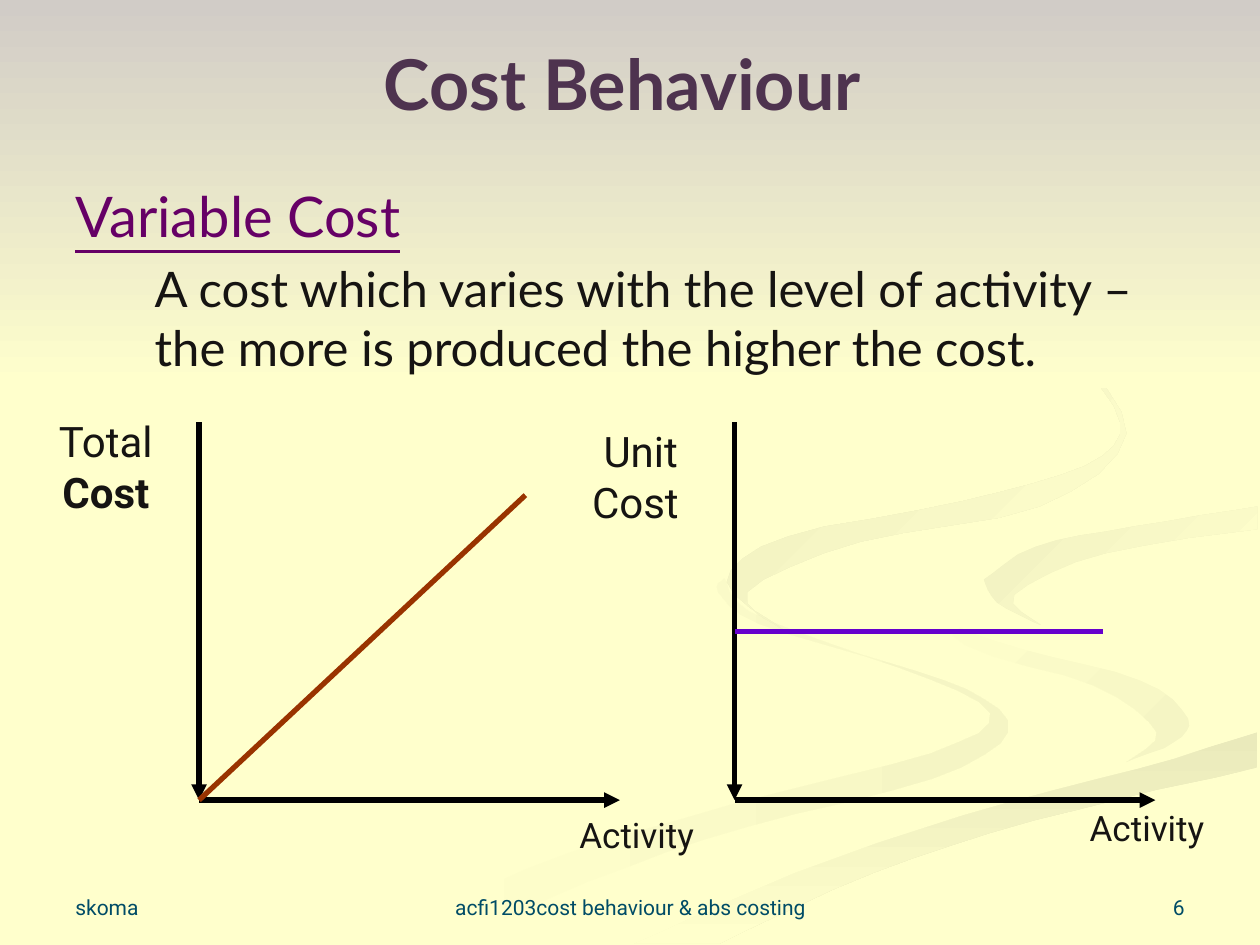
from pptx import Presentation
from pptx.dml.color import RGBColor
from pptx.enum.shapes import MSO_CONNECTOR
from pptx.enum.text import MSO_ANCHOR as ANCHOR, PP_ALIGN as ALIGN
from pptx.oxml.ns import qn
from pptx.util import Inches, Pt
from lxml import etree


def color(value):
    return RGBColor.from_string(value)


def add_text(at, paragraphs, anchor=ANCHOR.TOP):
    """Each paragraph is (format values, runs); each run is (text, font values, colour)."""
    box = slide.shapes.add_textbox(*map(Inches, at))
    frame = box.text_frame
    frame.word_wrap = True
    frame.vertical_anchor = anchor
    for number, (formats, runs) in enumerate(paragraphs):
        para = frame.add_paragraph() if number else frame.paragraphs[0]
        for name, value in formats.items():
            setattr(para, name, value)
        for words, font, hue in runs:
            span = para.add_run()
            span.text = words
            span.font.color.rgb = color(hue)
            for name, value in font.items():
                setattr(span.font, name, value)
    return box


deck = Presentation()
deck.slide_width, deck.slide_height = Inches(10), Inches(7.5)
slide = deck.slides.add_slide(deck.slide_layouts[6])

PAPER, INK = "FFFFCC", "161412"
background = slide.background.fill
background.solid()
background.fore_color.rgb = color(PAPER)

# Ribbon edges, in hundredths of an inch; neighbouring ribbons share edges
left_outer = [(575, 459), (594, 485), (682, 519), (767, 547), (800, 581),
              (740, 618), (594, 656), (466, 700), (361, 749)]
left_inner = [(300, 749), (417, 690), (579, 639), (739, 598), (786, 566),
              (714, 530), (602, 495), (570, 470), (575, 459)]
right_outer = [(724, 464), (745, 490), (811, 515), (905, 540), (943, 570),
               (932, 589), (894, 605)]
right_inner = [(894, 605), (918, 581), (868, 544), (766, 512), (724, 464)]
right_tail = [(894, 605), (780, 634), (619, 684), (477, 749)]
band_top = [(503, 749), (630, 693), (764, 647), (903, 610), (998, 581)]
band_bottom = [(998, 609), (821, 651), (695, 692), (571, 749)]
curl_back = [(998, 538), (866, 509), (804, 485), (781, 460)]
curl_top = [(781, 460), (822, 434), (899, 418), (998, 402)]
curl_bottom = [(998, 420), (878, 439), (805, 472), (826, 496)]
curl_end = [(826, 496), (791, 478), (781, 460)]
right_top = [(998, 387), (874, 408), (755, 432), (724, 464)]
upper_outer = [(622, 500), (577, 462), (625, 426), (763, 398), (861, 370),
               (889, 335), (846, 279), (762, 233)]
upper_inner = [(762, 233), (843, 275), (894, 344), (825, 402), (683, 430),
               (593, 470), (622, 500)]
page_top, page_fade = [(0, 0), (1000, 0)], [(1000, 308), (0, 308)]

# Ribbons and top fade: first colour, last colour, clockwise angle, edges
ribbons = [
    (PAPER, "F5F5C4", 0, [left_outer, left_inner]),
    (PAPER, "F5F5C4", 45, [right_outer, right_inner]),
    ("EAEABB", PAPER, 90, [band_top, band_bottom]),
    (PAPER, PAPER, 0,
     [right_outer, right_tail, band_top, curl_back, curl_top, right_top]),
    ("F1F1C1", PAPER, 45, [curl_top, curl_bottom, curl_end]),
    ("EDEDBE", PAPER, 45, [upper_outer, upper_inner]),
    ("D1CCC7", PAPER, 90, [page_top, page_fade]),
]
STEPS = 4
for first, last, angle, edges in ribbons:
    # Round each edge with a Catmull-Rom curve through its points
    outline = []
    for edge in edges:
        ends = [edge[0], *edge, edge[-1]]
        for a, b, c, d in zip(ends, ends[1:], ends[2:], ends[3:]):
            for t in (step / STEPS for step in range(STEPS)):
                outline.append(tuple(
                    q + t * (r - p + t * (2 * p - 5 * q + 4 * r - s
                                          + t * (3 * q - p - 3 * r + s))) / 2
                    for p, q, r, s in zip(a, b, c, d)))
        outline.append(edge[-1])
    builder = slide.shapes.build_freeform(*outline[0], scale=Inches(0.01))
    builder.add_line_segments(outline[1:], close=True)
    ribbon = builder.convert_to_shape()
    ribbon.shadow.inherit = False
    ribbon.line.fill.background()
    if first == last:
        ribbon.fill.solid()
        ribbon.fill.fore_color.rgb = color(first)
        continue
    ribbon.fill.gradient()
    ribbon.fill.gradient_angle = -angle % 360
    for stop, hue in zip(ribbon.fill.gradient_stops, (first, last)):
        stop.color.rgb = color(hue)

# Title and definition
title_font = {"name": "Lato", "size": Pt(40), "bold": True}
heading_font = {"name": "Lato", "size": Pt(32), "underline": True}
body_font = {"name": "Lato", "size": Pt(28)}
add_text((0.5, 0.3, 9, 0.71), [
    ({"alignment": ALIGN.CENTER}, [("Cost Behaviour ", title_font, "4E334F")]),
], ANCHOR.MIDDLE)
definition = add_text((0.5, 1.39, 9, 5.51), [
    ({}, [("Variable Cost", heading_font, "660066")]),
    ({"space_before": Pt(5.6)},
     [("A cost which varies with the level of activity – "
       "the more is produced the higher the cost.", body_font, INK)]),
])
definition.text_frame.paragraphs[1]._p.get_or_add_pPr().set("marL", str(Inches(0.63)))

# Axes and cost lines: start, end, colour, arrowhead
lines = []
for origin in (1.58, 5.83):
    lines += [((origin, 3.35), (origin, 6.35), "000000", True),
              ((origin, 6.35), (origin + 3.34, 6.35), "000000", True)]
lines += [((1.58, 6.35), (4.17, 3.93), "993300", False),
          ((5.83, 5.01), (8.75, 5.01), "6600CC", False)]
for start, end, hue, arrow in lines:
    line = slide.shapes.add_connector(
        MSO_CONNECTOR.STRAIGHT, *map(Inches, start + end))
    line.line.width = Pt(3)
    line.line.color.rgb = color(hue)
    if arrow:
        etree.SubElement(line.line._get_or_add_ln(), qn("a:tailEnd"), type="triangle")
    etree.SubElement(line._element.spPr, qn("a:effectLst"))

# Axis labels
small = {"name": "Roboto", "size": Pt(20)}
large = {"name": "Roboto", "size": Pt(24)}
for left, top in ((4.5, 6.41), (8.55, 6.35)):
    add_text((left, top, 1.33, 0.43), [({}, [("Activity", small, INK)])])
for at, runs in (
    ((0.34, 3.25, 1, 2.42),
     [("Total ", large, INK), ("Cost", {**large, "bold": True}, INK)]),
    ((4.42, 3.33, 1.33, 2.75), [("Unit Cost ", large, INK)]),
):
    add_text(at, [({"alignment": ALIGN.CENTER}, runs)])

# Footer
footer_font = {"name": "Roboto", "size": Pt(12)}
for left, width, align, words in (
    (0.5, 2.33, ALIGN.LEFT, "skoma"),
    (3.42, 3.17, ALIGN.CENTER, "acfi1203cost behaviour & abs costing"),
    (7.17, 2.33, ALIGN.RIGHT, "6"),
):
    add_text((left, 6.83, width, 0.52),
             [({"alignment": align}, [(words, footer_font, "004C66")])], ANCHOR.BOTTOM)

deck.save("out.pptx")
